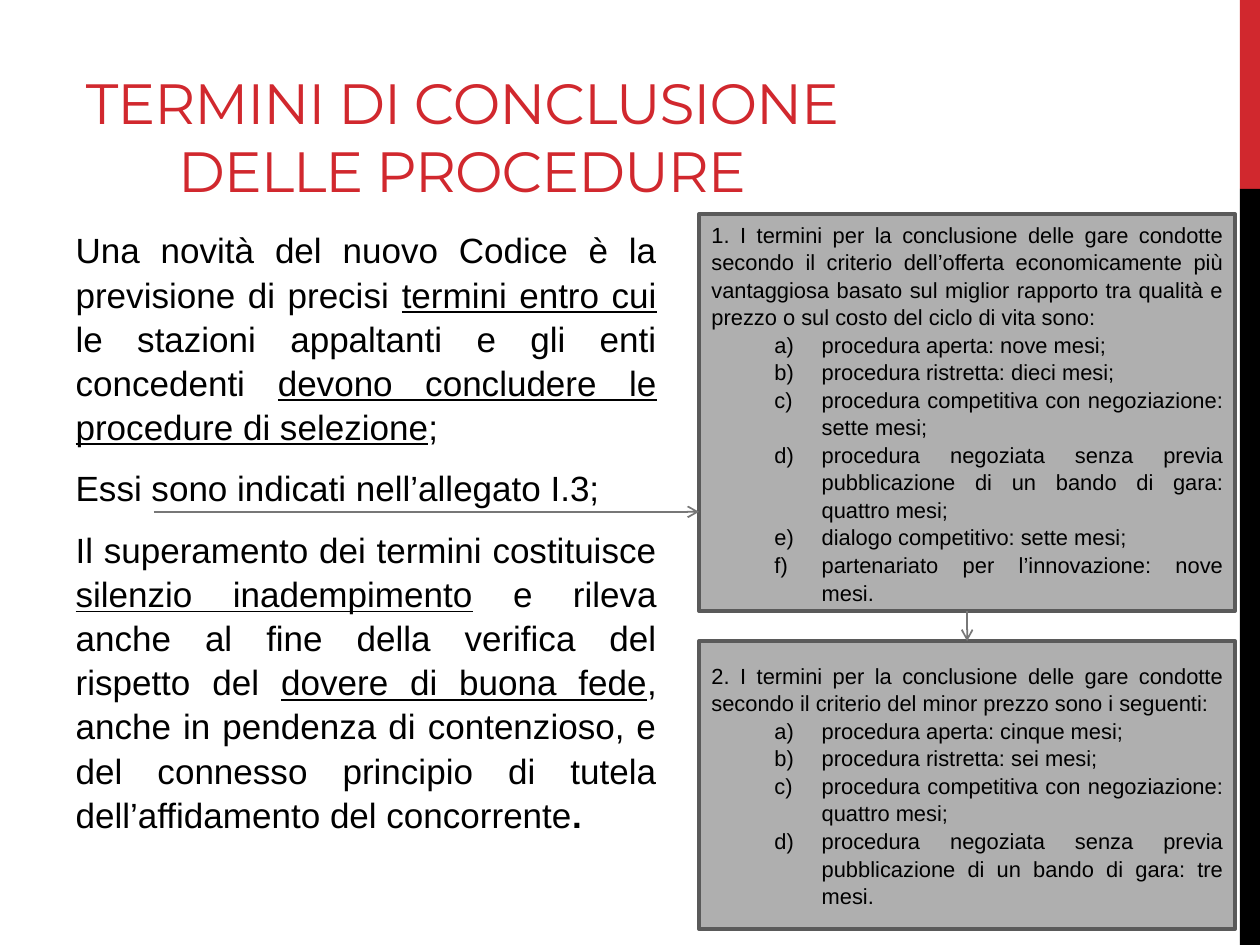
from dataclasses import dataclass
from lxml.etree import SubElement
from pptx import Presentation
from pptx.dml.color import RGBColor
from pptx.enum.shapes import MSO_CONNECTOR, MSO_SHAPE
from pptx.enum.text import MSO_ANCHOR, MSO_AUTO_SIZE, PP_ALIGN
from pptx.oxml.ns import qn
from pptx.util import Pt


@dataclass
class Theme:
    red: RGBColor = RGBColor(0xD1, 0x28, 0x2E)
    black: RGBColor = RGBColor(0, 0, 0)
    panel: RGBColor = RGBColor(0xAF, 0xAF, 0xAF)
    edge: RGBColor = RGBColor(0x5A, 0x5A, 0x5A)
    arrow: RGBColor = RGBColor(0x77, 0x77, 0x77)
    head: str = "Montserrat"
    text: str = "Arial"
    title: float = 32.4
    body: float = 20
    small: float = 12.5


theme = Theme()


def style(para, size, align=PP_ALIGN.JUSTIFY, color=theme.black, name=theme.text):
    para.alignment = align
    font = para.font
    font.size, font.name = Pt(size), name
    font.color.rgb = color


def place(shape, left, top, width, height):
    shape.left, shape.top = Pt(left), Pt(top)
    shape.width, shape.height = Pt(width), Pt(height)


deck = Presentation()
deck.slide_width, deck.slide_height = Pt(720), Pt(540)
slide = deck.slides.add_slide(deck.slide_layouts[1])
shapes = slide.shapes

# Side bars
for top, height, color in [(0, 108, theme.red), (108, 432, theme.black)]:
    bar = shapes.add_shape(MSO_SHAPE.RECTANGLE, Pt(708.5), Pt(top), Pt(11.5), Pt(height))
    bar.shadow.inherit = False
    bar.fill.solid()
    bar.fill.fore_color.rgb = color
    bar.line.fill.background()

# Title
title = shapes.title
place(title, 36, 12, 456, 108)
frame = title.text_frame
frame.text = "TERMINI DI CONCLUSIONE DELLE PROCEDURE"
frame.vertical_anchor = MSO_ANCHOR.BOTTOM
frame.auto_size = MSO_AUTO_SIZE.NONE
para = frame.paragraphs[0]
style(para, theme.title, PP_ALIGN.CENTER, theme.red, theme.head)
para.runs[0].font._element.set("spc", "-60")

# Body: each run is its text and its mark (u underlined, b bold)
story = [
    [
        ("Una novità del nuovo Codice è la previsione di precisi ", ""),
        ("termini entro cui ", "u"),
        ("le stazioni appaltanti e gli enti concedenti ", ""),
        ("devono concludere le procedure di selezione", "u"),
        (";", ""),
    ],
    [("Essi sono indicati nell’allegato I.3;", "")],
    [
        ("Il superamento dei termini costituisce ", ""),
        ("silenzio inadempimento", "u"),
        (" e rileva anche al fine della verifica del rispetto del ", ""),
        ("dovere di buona fede", "u"),
        (", anche in pendenza di contenzioso, e del connesso principio di "
         "tutela dell’affidamento del concorrente", ""),
        (".", "b"),
    ],
]
body = slide.placeholders[1]
place(body, 36, 126, 346.5, 384)
frame = body.text_frame
frame.auto_size = MSO_AUTO_SIZE.NONE
for i, parts in enumerate(story):
    para = frame.add_paragraph() if i else frame.paragraphs[0]
    style(para, theme.body)
    para.line_spacing = 1.05
    para.space_before, para.space_after = Pt(4), Pt(6)
    props = para._p.get_or_add_pPr()
    props.set("marL", "0")
    props.set("indent", "0")
    props.insert_element_before(props.makeelement(qn("a:buNone")), "a:defRPr")
    for words, mark in parts:
        run = para.add_run()
        run.text = words
        if mark == "u":
            run.font.underline = True
        if mark == "b":
            run.font.bold = True

# Panels: top, height, lead, lettered list
panels = [
    (122.4, 226.8,
     "1. I termini per la conclusione delle gare condotte secondo il criterio "
     "dell’offerta economicamente più vantaggiosa basato sul miglior rapporto "
     "tra qualità e prezzo o sul costo del ciclo di vita sono:",
     ["procedura aperta: nove mesi;",
      "procedura ristretta: dieci mesi;",
      "procedura competitiva con negoziazione: sette mesi;",
      "procedura negoziata senza previa pubblicazione di un bando di gara: quattro mesi;",
      "dialogo competitivo: sette mesi;",
      "partenariato per l’innovazione: nove mesi."]),
    (366.4, 164.4,
     "2. I termini per la conclusione delle gare condotte secondo il criterio "
     "del minor prezzo sono i seguenti:",
     ["procedura aperta: cinque mesi;",
      "procedura ristretta: sei mesi;",
      "procedura competitiva con negoziazione: quattro mesi;",
      "procedura negoziata senza previa pubblicazione di un bando di gara: tre mesi."]),
]
boxes = []
for top, height, lead, items in panels:
    box = shapes.add_shape(MSO_SHAPE.RECTANGLE, Pt(399.5), Pt(top), Pt(306.3), Pt(height))
    box.shadow.inherit = False
    box.fill.solid()
    box.fill.fore_color.rgb = theme.panel
    box.line.color.rgb = theme.edge
    box.line.width = Pt(2.25)
    frame = box.text_frame
    frame.word_wrap = True
    frame.vertical_anchor = MSO_ANCHOR.MIDDLE
    for i, words in enumerate([lead] + items):
        para = frame.add_paragraph() if i else frame.paragraphs[0]
        para.text = words
        style(para, theme.small)
        para.line_spacing = 1.05
        if i:
            para.level = 1
            props = para._p.get_or_add_pPr()
            props.set("marL", str(Pt(63)))
            props.set("indent", str(Pt(-27)))
            letter = props.makeelement(qn("a:buAutoNum"), {"type": "alphaLcParenR"})
            props.insert_element_before(letter, "a:defRPr")
    boxes.append(box)

# Arrows: from the text to the first panel, then down to the second
across = shapes.add_connector(MSO_CONNECTOR.STRAIGHT, Pt(88), Pt(292.5), Pt(399.5), Pt(292.5))
down = shapes.add_connector(MSO_CONNECTOR.STRAIGHT, 0, 0, 0, 0)
down.begin_connect(boxes[0], 2)
down.end_connect(boxes[1], 0)
for link in (across, down):
    link.line.color.rgb = theme.arrow
    link.line.width = Pt(1)
    SubElement(link.line._get_or_add_ln(), qn("a:tailEnd"), type="arrow")
    SubElement(link._element.spPr, qn("a:effectLst"))

deck.save("out.pptx")
